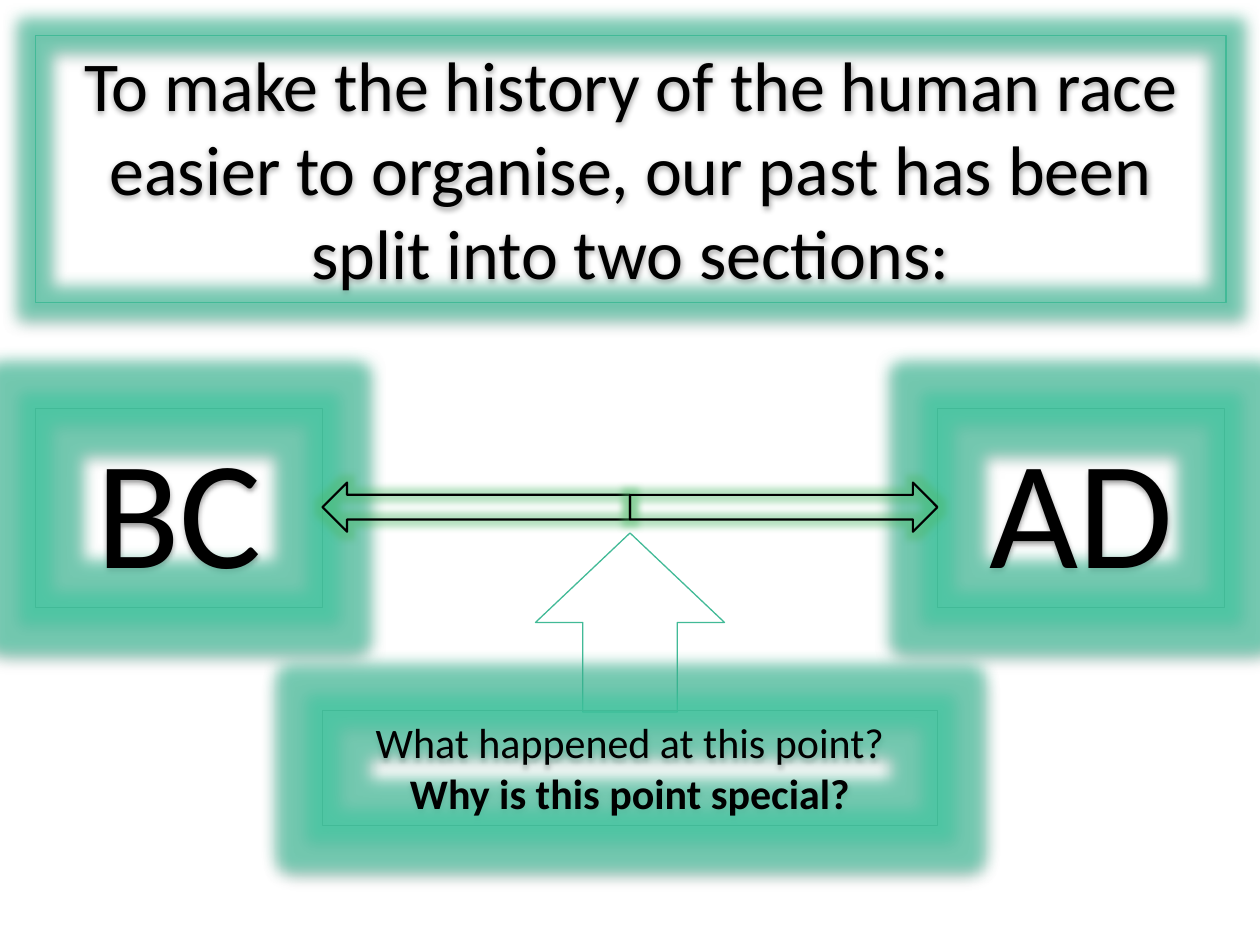
from lxml.etree import SubElement
from pptx import Presentation
from pptx.dml.color import RGBColor
from pptx.enum.shapes import MSO_SHAPE
from pptx.enum.text import MSO_ANCHOR, MSO_AUTO_SIZE, PP_ALIGN
from pptx.oxml.ns import qn
from pptx.util import Inches, Pt


def rgb(value):
    return RGBColor.from_string(value)


class SlideBuilder:
    FONT = "Calibri"
    BLACK = "000000"
    TEAL = "42BA97"
    TEAL_GLOW = "3FCBA3"
    GREEN_GLOW = "49B764"

    def __init__(self, slide):
        self.slide = slide

    def effect(self, sp, kind, color, alpha, **attributes):
        effects = sp._element.spPr.find(qn("a:effectLst"))
        node = SubElement(effects, qn(f"a:{kind}"),
                          {k: str(v) for k, v in attributes.items()})
        clr = SubElement(node, qn("a:srgbClr"), val=color)
        SubElement(clr, qn("a:alpha"), val=str(alpha * 1000))

    def outline(self, sp, color, width):
        sp.shadow.inherit = False
        sp.fill.background()
        sp.line.color.rgb = rgb(color)
        sp.line.width = Pt(width)

    def format_box(self, sp, lines, size):
        self.outline(sp, self.TEAL, 0.75)
        self.effect(sp, "glow", self.TEAL_GLOW, 60, rad=Pt(18))
        self.effect(sp, "outerShdw", self.BLACK, 38, blurRad=Pt(3.1),
                    dist=Pt(1.6), dir=90 * 60000, rotWithShape=0)
        tf = sp.text_frame
        tf.text = "\n".join(lines)
        tf.word_wrap = True
        tf.auto_size = MSO_AUTO_SIZE.SHAPE_TO_FIT_TEXT
        tf.vertical_anchor = MSO_ANCHOR.TOP
        for p in tf.paragraphs:
            p.alignment = PP_ALIGN.CENTER
            for r in p.runs:
                r.font.name = self.FONT
                r.font.size = Pt(size)
                r.font.color.rgb = rgb(self.BLACK)

    def title(self, text, x, y, w, h, size):
        sp = self.slide.shapes.title
        sp.left, sp.top, sp.width, sp.height = map(Inches, (x, y, w, h))
        self.format_box(sp, [text], size)

    def box(self, lines, x, y, w, h, size):
        sp = self.slide.shapes.add_shape(
            MSO_SHAPE.RECTANGLE, *map(Inches, (x, y, w, h)))
        self.format_box(sp, lines, size)
        return sp

    def arrow(self, x, y, w, h, color, width, rotation=0):
        sp = self.slide.shapes.add_shape(
            MSO_SHAPE.LEFT_ARROW, *map(Inches, (x, y, w, h)))
        sp.rotation = rotation
        self.outline(sp, color, width)
        return sp


def main():
    prs = Presentation()
    prs.slide_width, prs.slide_height = Inches(10), Inches(7.5)
    s = SlideBuilder(prs.slides.add_slide(prs.slide_layouts[5]))

    # Heading
    s.title("To make the history of the human race easier to organise, "
            "our past has been split into two sections:",
            0.28, 0.28, 9.45, 2.12, 40)

    # The two eras
    for era, x in (("BC", 0.28), ("AD", 7.44)):
        s.box([era], x, 3.24, 2.28, 1.58, 88)

    # Timeline arrows from the middle to each era
    for x, rotation in ((2.56, 0), (5, 180)):
        sp = s.arrow(x, 3.83, 2.44, 0.39, s.BLACK, 1.25, rotation)
        s.effect(sp, "glow", s.GREEN_GLOW, 40, rad=Pt(8))

    # Question pointing at the middle of the timeline
    s.arrow(4.29, 4.19, 1.42, 1.5, s.TEAL, 0.75, rotation=90)
    question = s.box(["What happened at this point?",
                      "Why is this point special?"],
                     2.56, 5.64, 4.88, 0.91, 24)
    question.text_frame.paragraphs[1].runs[0].font.bold = True

    prs.save("out.pptx")


if __name__ == "__main__":
    main()
